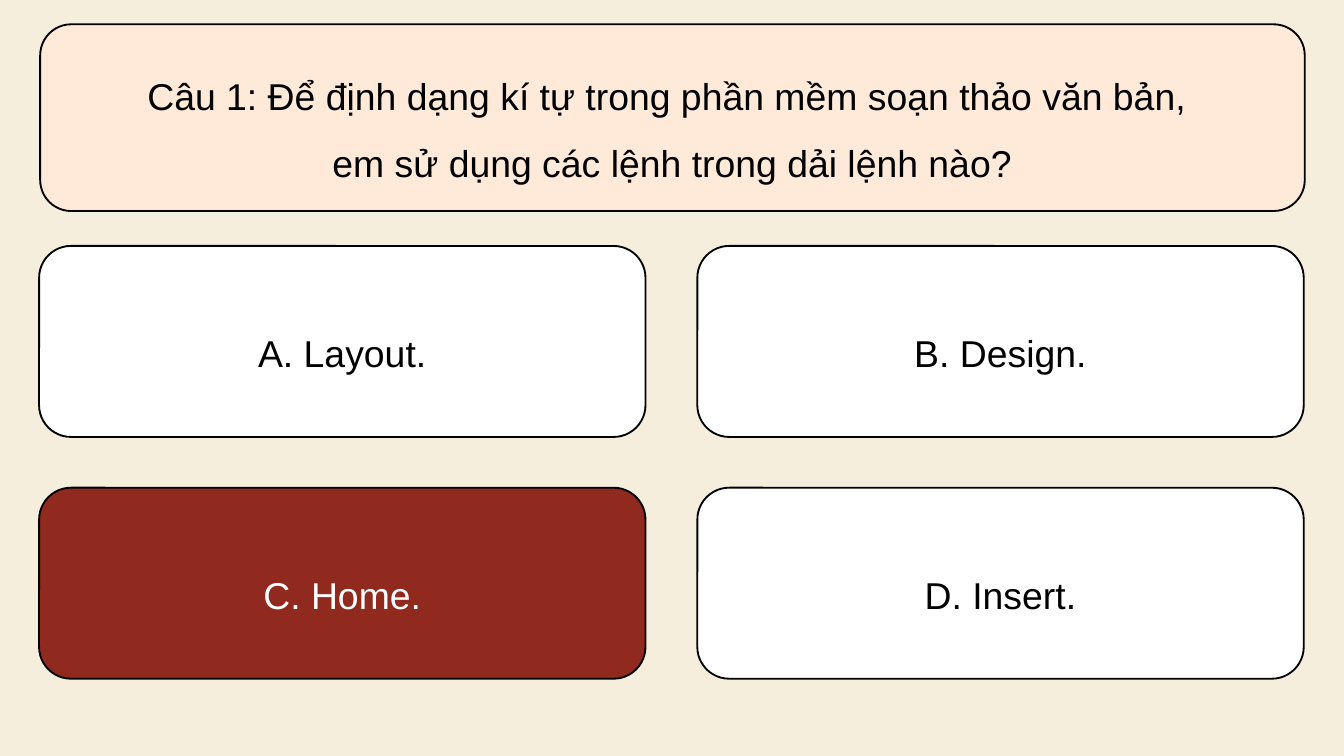
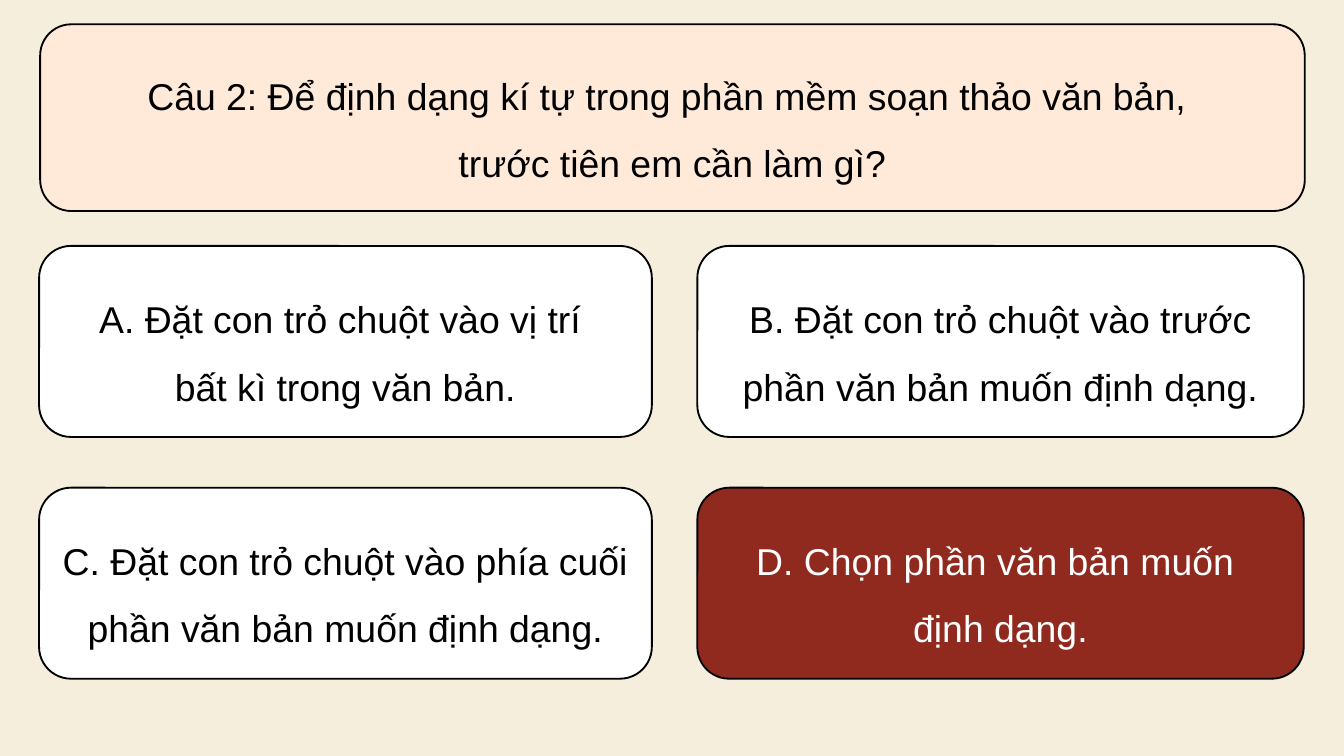
from pptx import Presentation
from pptx import util as u
from pptx.dml import color
from pptx.enum import shapes, text

# Shared look
SAND, PEACH, WHITE, BRICK, BLACK = "F5EEDC", "FFEADA", "FFFFFF", "90291E", "000000"
FONT, SIZE = "Arial", 20

# Answer grid, in cm
LEFT, TOP, HIGH = 0.74, 4.65, 3.61
STEP_X, STEP_Y = 12.44, 4.57
WIDE = 11.46

# Each question: lines, answers in order A to D, right letter, width of left column
QUIZ = [
    (["Câu 1: Để định dạng kí tự trong phần mềm soạn thảo văn bản, ",
      "em sử dụng các lệnh trong dải lệnh nào?"],
     [["A. Layout."], ["B. Design."], ["C. Home."], ["D. Insert."]],
     "C", WIDE),
    (["Câu 2: Để định dạng kí tự trong phần mềm soạn thảo văn bản, ",
      "trước tiên em cần làm gì?"],
     [["A. Đặt con trỏ chuột vào vị trí ", "bất kì trong văn bản."],
      ["B. Đặt con trỏ chuột vào trước phần văn bản muốn định dạng."],
      ["C. Đặt con trỏ chuột vào phía cuối phần văn bản muốn định dạng."],
      ["D. Chọn phần văn bản muốn ", "định dạng."]],
     "D", 11.58),
]


def paint(form, code):
    if hasattr(form, "solid"):
        form.solid()
        form = form.fore_color
    form.rgb = color.RGBColor.from_string(code)


def card(slide, x, y, w, h, lines, fill, ink=BLACK):
    box = slide.shapes.add_shape(shapes.MSO_SHAPE.ROUNDED_RECTANGLE,
                                 u.Cm(x), u.Cm(y), u.Cm(w), u.Cm(h))
    box.shadow.inherit = False
    paint(box.fill, fill)
    paint(box.line.color, BLACK)
    box.line.width = u.Pt(1)
    frame = box.text_frame
    frame.word_wrap = True
    frame.vertical_anchor = text.MSO_ANCHOR.MIDDLE
    for i, line in enumerate(lines):
        para = frame.add_paragraph() if i else frame.paragraphs[0]
        para.alignment = text.PP_ALIGN.CENTER
        para.line_spacing = 1.5
        run = para.add_run()
        run.text = line
        run.font.name = FONT
        run.font.size = u.Pt(SIZE)
        paint(run.font.color, ink)


deck = Presentation()
deck.slide_width, deck.slide_height = u.Cm(25.4), u.Cm(14.29)

for ask, answers, right, first in QUIZ:
    slide = deck.slides.add_slide(deck.slide_layouts[6])
    paint(slide.background.fill, SAND)

    # Question
    card(slide, 0.76, 0.46, 23.9, 3.53, ask, PEACH)

    # Answers, two by two, with the right one in brick
    for i, lines in enumerate(answers):
        row, col = divmod(i, 2)
        fill, ink = (BRICK, WHITE) if lines[0][0] == right else (WHITE, BLACK)
        card(slide, LEFT + col * STEP_X, TOP + row * STEP_Y,
             WIDE if col else first, HIGH, lines, fill, ink)

deck.save("out.pptx")
